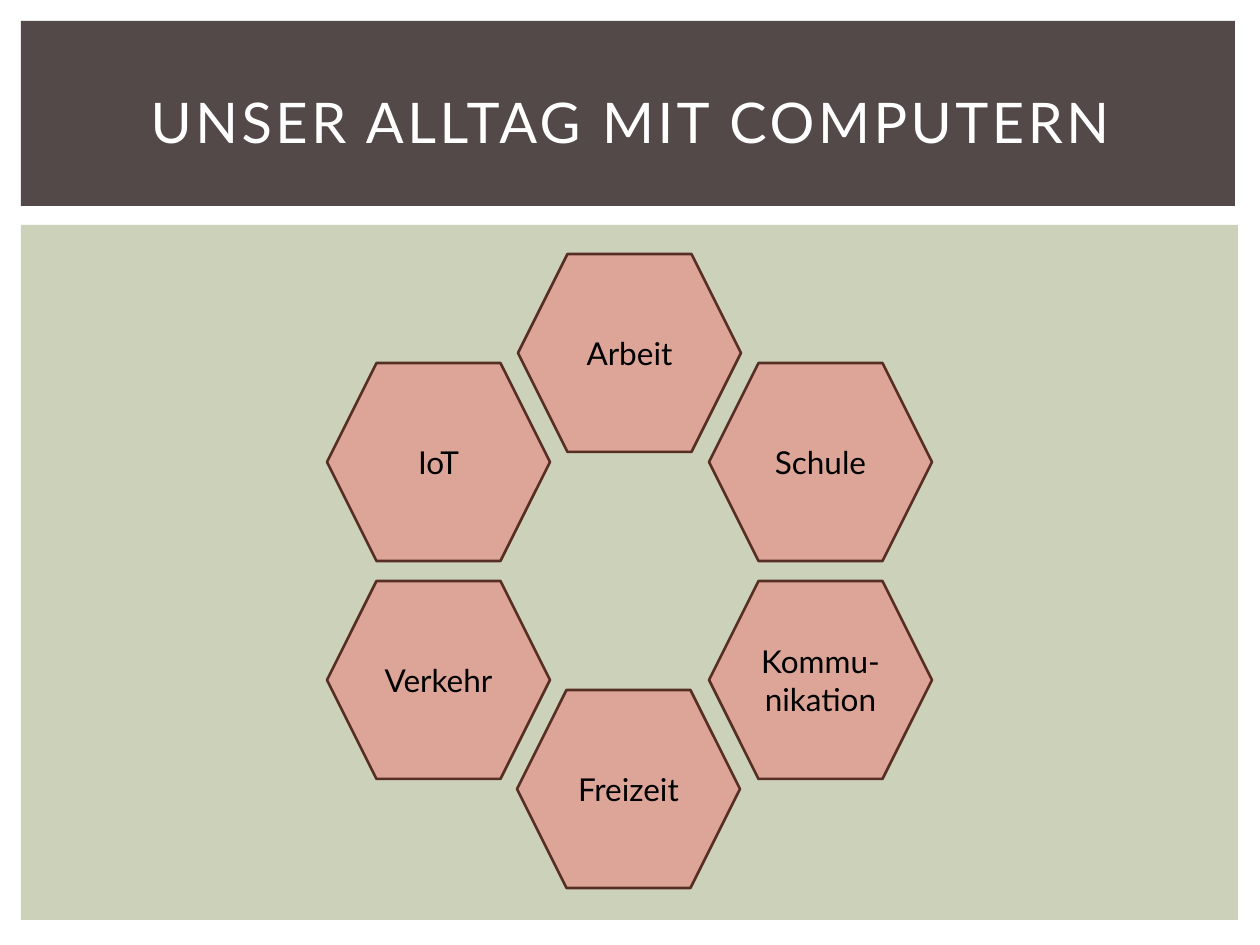
import pptx
import pptx.dml.color
import pptx.enum.shapes
import pptx.enum.text
import pptx.util

PX = 914400 / 126
SHAPE = pptx.enum.shapes.MSO_SHAPE


def add_box(kind, x, y, w, h, fill, line=None):
    """Add a shadowless shape, with lengths in px."""
    sp = s.shapes.add_shape(kind, *(round(v * PX) for v in (x, y, w, h)))
    sp.shadow.inherit = False
    sp.fill.solid()
    sp.fill.fore_color.rgb = pptx.dml.color.RGBColor.from_string(fill)
    if line:
        sp.line.color.rgb = pptx.dml.color.RGBColor.from_string(line)
        sp.line.width = pptx.util.Pt(1.5)
    else:
        sp.line.fill.background()
    return sp


def set_text(sp, text, size, color):
    """Write one centred paragraph and return its run."""
    tf = sp.text_frame
    tf.word_wrap = True
    tf.vertical_anchor = pptx.enum.text.MSO_ANCHOR.MIDDLE
    tf.margin_left = tf.margin_right = tf.margin_top = tf.margin_bottom = 0
    p = tf.paragraphs[0]
    p.alignment = pptx.enum.text.PP_ALIGN.CENTER
    r = p.add_run()
    r.text = text
    p.font.name = "Lato"
    p.font.size = pptx.util.Pt(size)
    p.font.color.rgb = pptx.dml.color.RGBColor.from_string(color)
    return r


prs = pptx.Presentation()
prs.slide_width = pptx.util.Inches(10)
prs.slide_height = pptx.util.Inches(7.5)
s = prs.slides.add_slide(prs.slide_layouts[6])

# Background panels and title
add_box(SHAPE.RECTANGLE, 21, 225, 1217, 695, "CCD1B9")
add_box(SHAPE.RECTANGLE, 21, 21, 1214, 185, "534949")
title = s.shapes.add_textbox(*(round(v * PX) for v in (53, 49, 1155, 145)))
r = set_text(title, "UNSER ALLTAG MIT COMPUTERN", 32, "FFFFFF")
r._r.get_or_add_rPr().set("spc", "200")

# Ring of hexagons
LEFT, RIGHT, UPPER, LOWER = 327, 709, 363, 581
topics = [
    ("Arbeit", 518, 254),
    ("Freizeit", 517, 690),
    ("Schule", RIGHT, UPPER),
    ("Kommu-nikation", RIGHT, LOWER),
    ("Verkehr", LEFT, LOWER),
    ("IoT", LEFT, UPPER),
]
for topic, x, y in topics:
    sp = add_box(SHAPE.HEXAGON, x, y, 223, 198, "DDA597", "572E24")
    set_text(sp, topic, 18, "000000")

prs.save("out.pptx")
